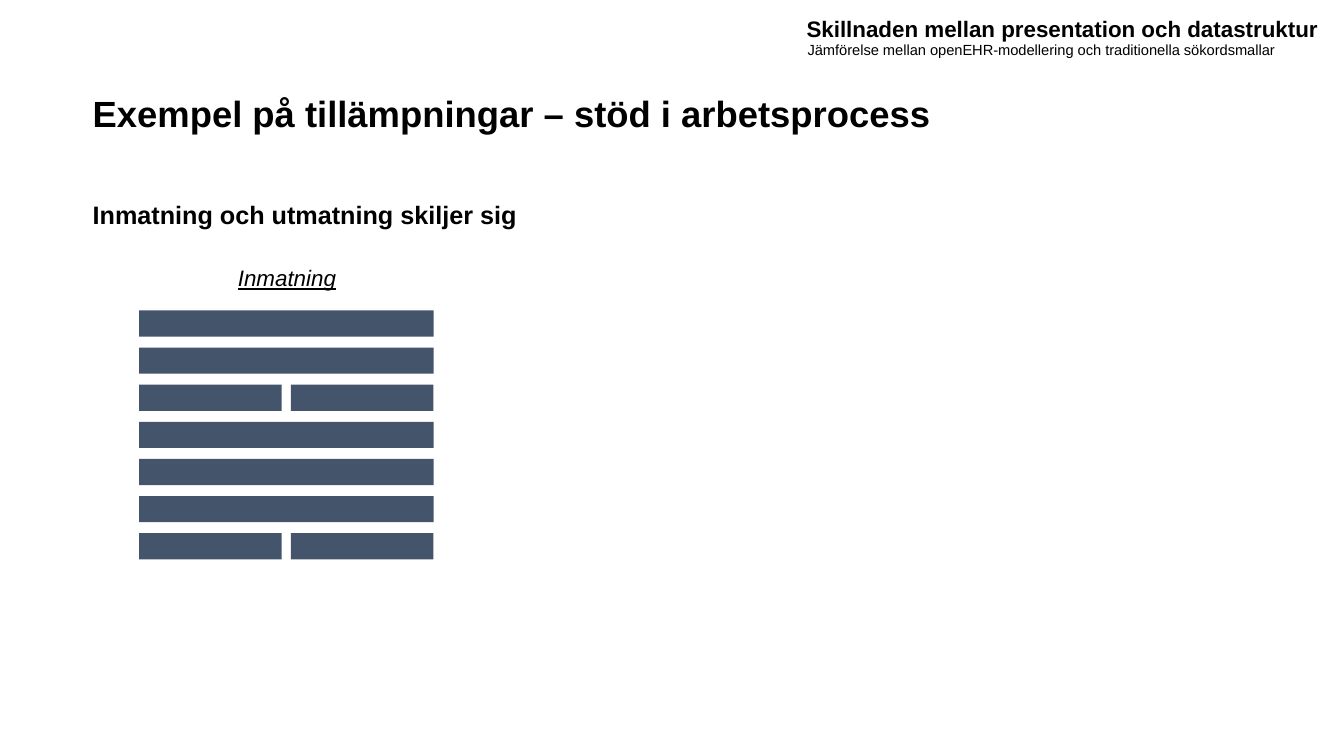
import pptx
import pptx.dml.color
import pptx.enum.shapes
import pptx.enum.text
import pptx.util
from dataclasses import dataclass

Inches = pptx.util.Inches
Anchor = pptx.enum.text.MSO_ANCHOR


@dataclass(frozen=True)
class Theme:
    font: str = "Arial"
    ink: str = "000000"
    field: str = "44546A"
    title: float = 26
    heading: float = 18
    label: float = 16
    caption: float = 10.5


THEME = Theme()


@dataclass(frozen=True)
class Box:
    left: float
    top: float
    width: float
    height: float

    def inside(self, left, top, width, height):
        return Box(self.left + left, self.top + top, width, height)

    def lengths(self):
        return [Inches(n) for n in (self.left, self.top, self.width, self.height)]


def add_text(page, box, text, size, anchor=Anchor.TOP, **styles):
    frame = page.shapes.add_textbox(*box.lengths()).text_frame
    settings = {"word_wrap": True, "vertical_anchor": anchor, "margin_left": 0,
                "margin_top": 0, "margin_right": 0, "margin_bottom": 0}
    for name, value in settings.items():
        setattr(frame, name, value)
    para = frame.paragraphs[0]
    para.alignment = pptx.enum.text.PP_ALIGN.LEFT
    span = para.add_run()
    span.text = text
    formats = {"name": THEME.font, "size": pptx.util.Pt(size), **styles}
    for name, value in formats.items():
        setattr(span.font, name, value)
    span.font.color.rgb = pptx.dml.color.RGBColor.from_string(THEME.ink)


def add_field(page, box):
    field = page.shapes.add_shape(
        pptx.enum.shapes.MSO_SHAPE.RECTANGLE, *box.lengths())
    field.shadow.inherit = False
    field.fill.solid()
    field.fill.fore_color.rgb = pptx.dml.color.RGBColor.from_string(THEME.field)
    field.line.fill.background()


def add_banner(page, box):
    # Presentation name and its subtitle, top right
    add_text(page, box.inside(0, 0, box.width, 0.51),
             "Skillnaden mellan presentation och datastruktur",
             THEME.label, Anchor.MIDDLE, bold=True)
    add_text(page, box.inside(0.01, 0.37, 5.04, 0.28),
             "Jämförelse mellan openEHR-modellering och traditionella sökordsmallar",
             THEME.caption)


def add_headings(page, box):
    # Slide title and section heading
    add_text(page, box.inside(0, 0, box.width, 1.45),
             "Exempel på tillämpningar – stöd i arbetsprocess",
             THEME.title, Anchor.MIDDLE, bold=True)
    add_text(page, box.inside(0, 1.58, box.width, 0.4),
             "Inmatning och utmatning skiljer sig", THEME.heading, bold=True)


def add_input_form(page, box, fields_per_row):
    # Label above the form
    add_text(page, box.inside(0.98, 0, 1.06, 0.39), "Inmatning",
             THEME.label, italic=True, underline=True)
    # Rows of input fields, spread evenly below the label
    first_row, field_height, gap = 0.46, 0.26, 0.09
    pitch = (box.height - first_row - field_height) / (len(fields_per_row) - 1)
    for row, count in enumerate(fields_per_row):
        width = (box.width - gap * (count - 1)) / count
        for column in range(count):
            add_field(page, box.inside(column * (width + gap),
                                       first_row + row * pitch,
                                       width, field_height))


def main():
    deck = pptx.Presentation()
    deck.slide_width = Inches(13.33)
    deck.slide_height = Inches(7.5)
    page = deck.slides.add_slide(deck.slide_layouts[6])
    add_headings(page, Box(0.92, 0.4, 11.5, 1.98))
    add_banner(page, Box(8, 0.03, 5.3, 0.65))
    add_input_form(page, Box(1.38, 2.62, 2.92, 2.93), [1, 1, 2, 1, 1, 1, 2])
    deck.save("out.pptx")


if __name__ == "__main__":
    main()
